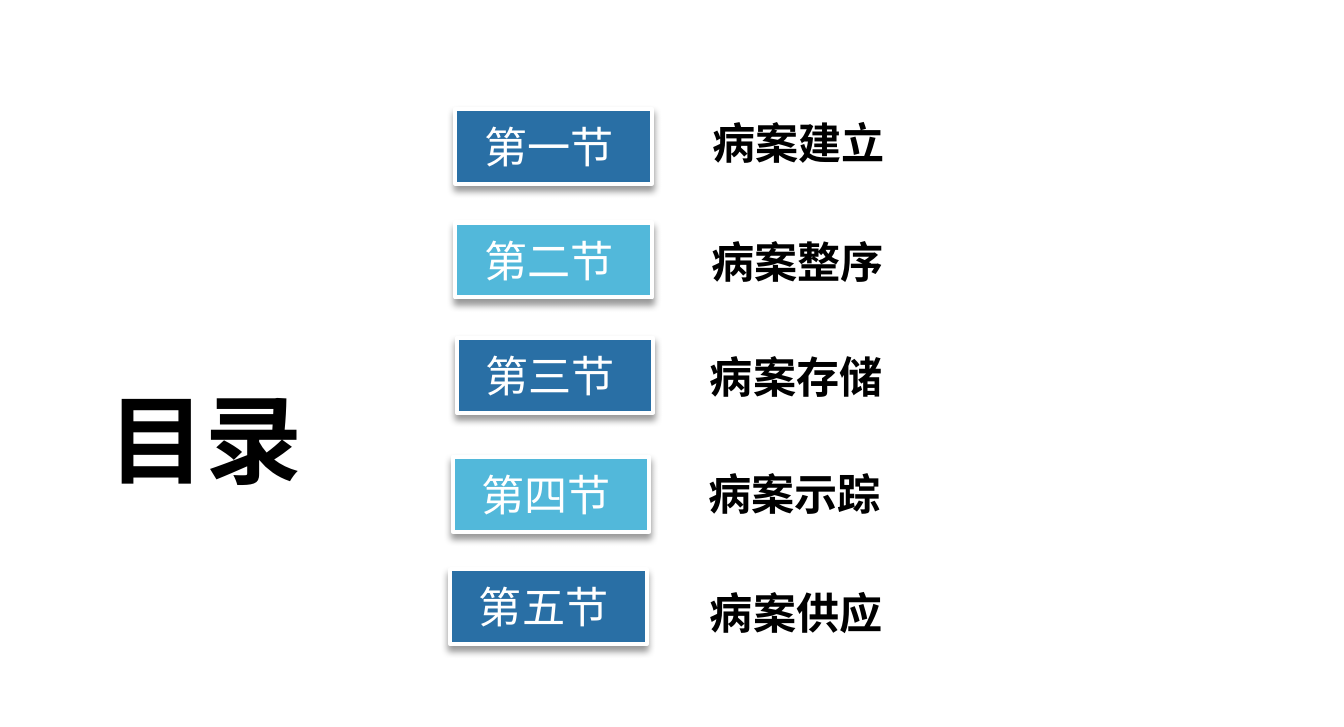
"""Build the contents slide listing five sections on medical records."""
from dataclasses import dataclass

from lxml import etree
from pptx import Presentation
from pptx.dml.color import RGBColor
from pptx.enum.shapes import MSO_SHAPE
from pptx.enum.text import MSO_ANCHOR, MSO_AUTO_SIZE, PP_ALIGN
from pptx.oxml import parse_xml
from pptx.oxml.ns import nsdecls, qn
from pptx.util import Inches, Pt

RECTANGLE = MSO_SHAPE.RECTANGLE
MIDDLE = MSO_ANCHOR.MIDDLE
NO_AUTOFIT = MSO_AUTO_SIZE.NONE
LEFT, CENTER = PP_ALIGN.LEFT, PP_ALIGN.CENTER


@dataclass(frozen=True)
class Theme:
    dark_blue: RGBColor = RGBColor(0x29, 0x6F, 0xA5)
    light_blue: RGBColor = RGBColor(0x52, 0xB8, 0xDA)
    white: RGBColor = RGBColor(0xFF, 0xFF, 0xFF)
    black: RGBColor = RGBColor(0, 0, 0)
    latin_font: str = "Times New Roman"
    chinese_font: str = "Noto Sans CJK SC"
    title_size: Pt = Pt(54)
    body_size: Pt = Pt(24)
    border_width: Pt = Pt(2.25)


THEME = Theme()
SHADOW = (
    f'<a:outerShdw {nsdecls("a")} blurRad="{Pt(4)}" dist="{Pt(3)}" dir="5400000" rotWithShape="0">'
    '<a:srgbClr val="000000"><a:alpha val="40000"/></a:srgbClr></a:outerShdw>'
)


def write_text(shape, text, alignment, wrap, font_format):
    frame = shape.text_frame
    frame_format = {"auto_size": NO_AUTOFIT, "word_wrap": wrap, "vertical_anchor": MIDDLE}
    for name, value in frame_format.items():
        setattr(frame, name, value)
    paragraph = frame.paragraphs[0]
    paragraph.alignment = alignment
    run = paragraph.add_run()
    run.text = text
    color = font_format["color"]
    for name, value in font_format.items():
        if name != "color":
            setattr(run.font, name, value)
    run.font.color.rgb = color
    east_asian = etree.SubElement(run.font._element, qn("a:ea"))
    east_asian.set("typeface", THEME.chinese_font)


title_format = {"name": THEME.chinese_font, "size": THEME.title_size, "bold": True, "color": THEME.black}
button_format = {"name": THEME.latin_font, "size": THEME.body_size, "bold": False, "color": THEME.white}
label_format = {**button_format, "bold": True, "color": THEME.black}

presentation = Presentation()
presentation.slide_width = Inches(10.39)
presentation.slide_height = Inches(5.62)
slide = presentation.slides.add_slide(presentation.slide_layouts[5])

title = slide.shapes.title
title_box = {"left": 0.74, "top": 2.88, "width": 1.79, "height": 1.01}
for side, length in title_box.items():
    setattr(title, side, Inches(length))
write_text(title, "目录", LEFT, False, title_format)

sections = [
    ("第一节 ", (3.52, 0.84), "病案建立", (5.41, 0.85)),
    ("第二节 ", (3.52, 1.72), "病案整序", (5.4, 1.77)),
    ("第三节 ", (3.53, 2.61), "病案存储", (5.39, 2.66)),
    ("第四节 ", (3.5, 3.53), "病案示踪", (5.38, 3.56)),
    ("第五节 ", (3.48, 4.4), "病案供应", (5.39, 4.48)),
]
for index, (number, button_corner, topic, label_corner) in enumerate(sections):
    button = slide.shapes.add_shape(
        RECTANGLE, *map(Inches, button_corner), Inches(1.52), Inches(0.58)
    )
    button.fill.solid()
    button.fill.fore_color.rgb = THEME.light_blue if index % 2 else THEME.dark_blue
    button.line.color.rgb = THEME.white
    button.line.width = THEME.border_width
    button.shadow.inherit = False
    button._element.spPr.find(qn("a:effectLst")).append(parse_xml(SHADOW))
    write_text(button, number, CENTER, True, button_format)

    label = slide.shapes.add_textbox(*map(Inches, label_corner), Inches(3.3), Inches(0.5))
    write_text(label, topic, LEFT, True, label_format)

presentation.save("out.pptx")
